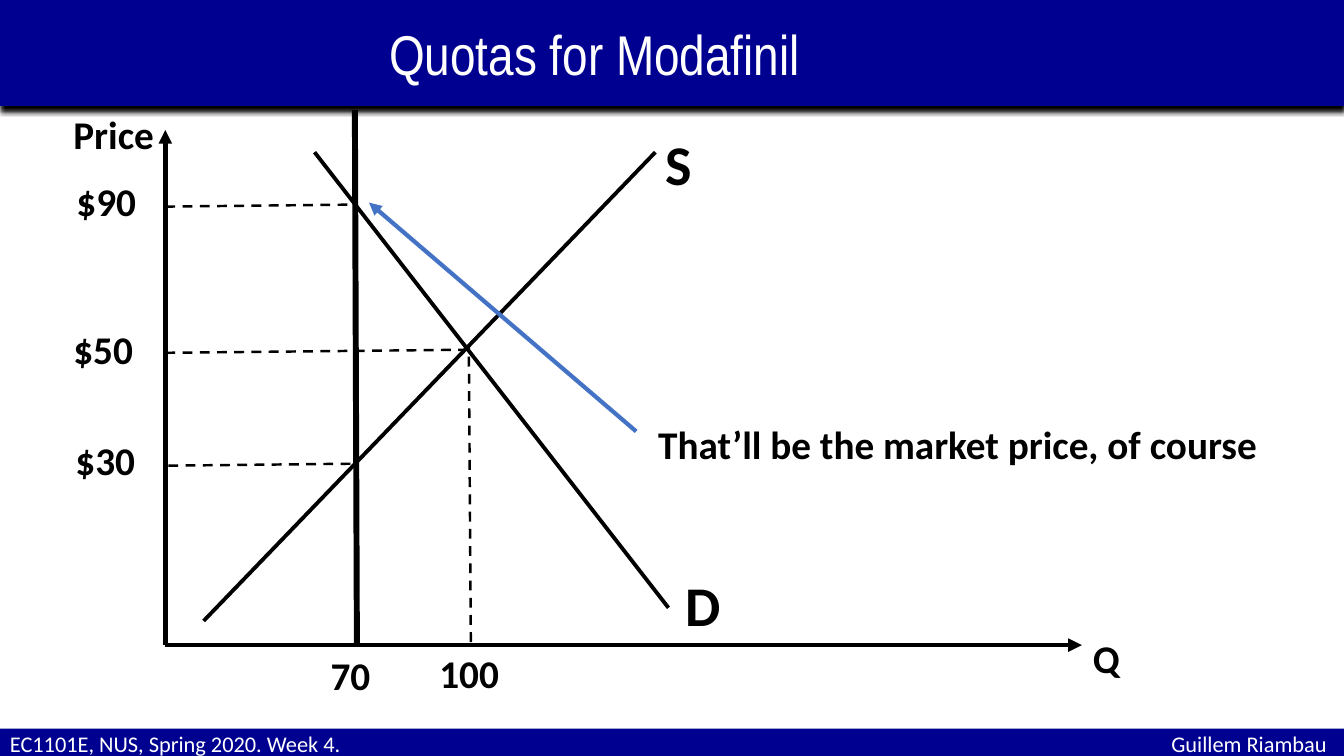
from dataclasses import dataclass

from lxml import etree
from pptx import Presentation
from pptx import util as u
from pptx.dml.color import RGBColor
from pptx.enum import dml, shapes, text
from pptx.oxml import ns

COLORS = {"black": "000000", "white": "FFFFFF", "navy": "000090", "blue": "4472C4"}
SLIDE_WIDTH = 13.33
ORIGIN = (1.64, 6.4)


@dataclass
class Band:
    wording: str
    top: float
    height: float
    font_name: str
    size: float
    left_inset: float = 0.1
    right_tab: float = 0


@dataclass
class Line:
    start: tuple[float, float]
    end: tuple[float, float]
    width: float
    color: str = "black"
    dashed: bool = False
    arrow: bool = False


@dataclass
class Label:
    wording: str
    left: float
    top: float
    size: float = 28
    width: float = 1.52


BANDS = [
    Band("EC1101E, NUS, Spring 2020. Week 4.\tGuillem Riambau", 7.23, 0.3,
         "Calibri", 16, right_tab=13.06),
    Band("Quotas for Modafinil", 0, 1.05, "Arial Narrow", 40, left_inset=3.86),
]

LINES = [
    Line(ORIGIN, (1.64, 1.29), 3.25, arrow=True),
    Line(ORIGIN, (10.73, 6.4), 3.25, arrow=True),
    Line((6.63, 6.03), (3.12, 1.51), 2.75),
    Line((2.02, 6.16), (6.5, 1.51), 2.75),
    Line((1.64, 3.5), (4.62, 3.47), 1.75, dashed=True),
    Line((4.67, 6.37), (4.65, 3.44), 1.75, dashed=True),
    Line((3.54, 6.4), (3.52, 1.09), 4.25),
    Line((6.31, 4.28), (3.66, 2.01), 3, "blue", arrow=True),
    Line((1.67, 4.62), (3.52, 4.6), 1.75, dashed=True),
    Line((1.64, 2.05), (3.49, 2.03), 1.75, dashed=True),
]

LABELS = [
    Label("Price", 0.63, 1.05),
    Label("Q", 10.74, 6.24),
    Label("D", 6.7, 5.61, 40),
    Label("S", 6.5, 1.24, 40),
    Label("$90", 0.66, 1.71),
    Label("$50", 0.63, 3.18),
    Label("$30", 0.65, 4.28),
    Label("70", 3.18, 6.41),
    Label("100", 4.26, 6.39),
    Label("That’ll be the market price, of course", 6.43, 4.12, width=6.38),
]


def rgb(name: str) -> RGBColor:
    return RGBColor.from_string(COLORS[name])


def add_child(parent, tag: str, **attributes: str):
    return etree.SubElement(parent, ns.qn(tag), attributes)


def set_font(paragraph, name: str, size: float, color: str, bold: bool) -> None:
    font = paragraph.font
    font.name = name
    font.size = u.Pt(size)
    font.bold = bold
    font.color.rgb = rgb(color)


def draw_band(slide, band: Band) -> None:
    shape = slide.shapes.add_shape(
        shapes.MSO_SHAPE.RECTANGLE, 0, u.Inches(band.top),
        u.Inches(SLIDE_WIDTH), u.Inches(band.height))
    shape.fill.solid()
    shape.fill.fore_color.rgb = rgb("navy")
    shape.line.fill.background()
    shape.shadow.inherit = False
    effects = shape.element.spPr.find(ns.qn("a:effectLst"))
    shadow = add_child(effects, "a:outerShdw", blurRad=str(u.Pt(4)),
                       dist=str(u.Pt(4)), dir="5400000", rotWithShape="0")
    add_child(shadow, "a:srgbClr", val=COLORS["black"])

    frame = shape.text_frame
    frame.word_wrap = True
    frame.vertical_anchor = text.MSO_ANCHOR.MIDDLE
    frame.margin_left = u.Inches(band.left_inset)
    paragraph = frame.paragraphs[0]
    paragraph.text = band.wording
    paragraph.alignment = text.PP_ALIGN.LEFT
    if band.right_tab:
        tabs = add_child(paragraph._p.get_or_add_pPr(), "a:tabLst")
        add_child(tabs, "a:tab", pos=str(u.Inches(band.right_tab)), algn="r")
    set_font(paragraph, band.font_name, band.size, "white", False)


def draw_line(slide, line: Line) -> None:
    connector = slide.shapes.add_connector(
        shapes.MSO_CONNECTOR.STRAIGHT,
        *(u.Inches(value) for value in line.start + line.end))
    connector.line.color.rgb = rgb(line.color)
    connector.line.width = u.Pt(line.width)
    if line.dashed:
        connector.line.dash_style = dml.MSO_LINE.DASH
    if line.arrow:
        add_child(connector.line._get_or_add_ln(), "a:tailEnd", type="triangle")
    add_child(connector.element.spPr, "a:effectLst")


def draw_label(slide, label: Label) -> None:
    height = 0.77 if label.size == 40 else 0.57
    box = slide.shapes.add_textbox(
        u.Inches(label.left), u.Inches(label.top),
        u.Inches(label.width), u.Inches(height))
    frame = box.text_frame
    frame.word_wrap = True
    frame.auto_size = text.MSO_AUTO_SIZE.SHAPE_TO_FIT_TEXT
    paragraph = frame.paragraphs[0]
    paragraph.text = label.wording
    set_font(paragraph, "Calibri", label.size, "black", True)


def main() -> None:
    presentation = Presentation()
    presentation.slide_width = u.Inches(SLIDE_WIDTH)
    presentation.slide_height = u.Inches(7.5)
    slide = presentation.slides.add_slide(presentation.slide_layouts[6])
    for band in BANDS:
        draw_band(slide, band)
    for line in LINES:
        draw_line(slide, line)
    for label in LABELS:
        draw_label(slide, label)
    presentation.save("out.pptx")


if __name__ == "__main__":
    main()
